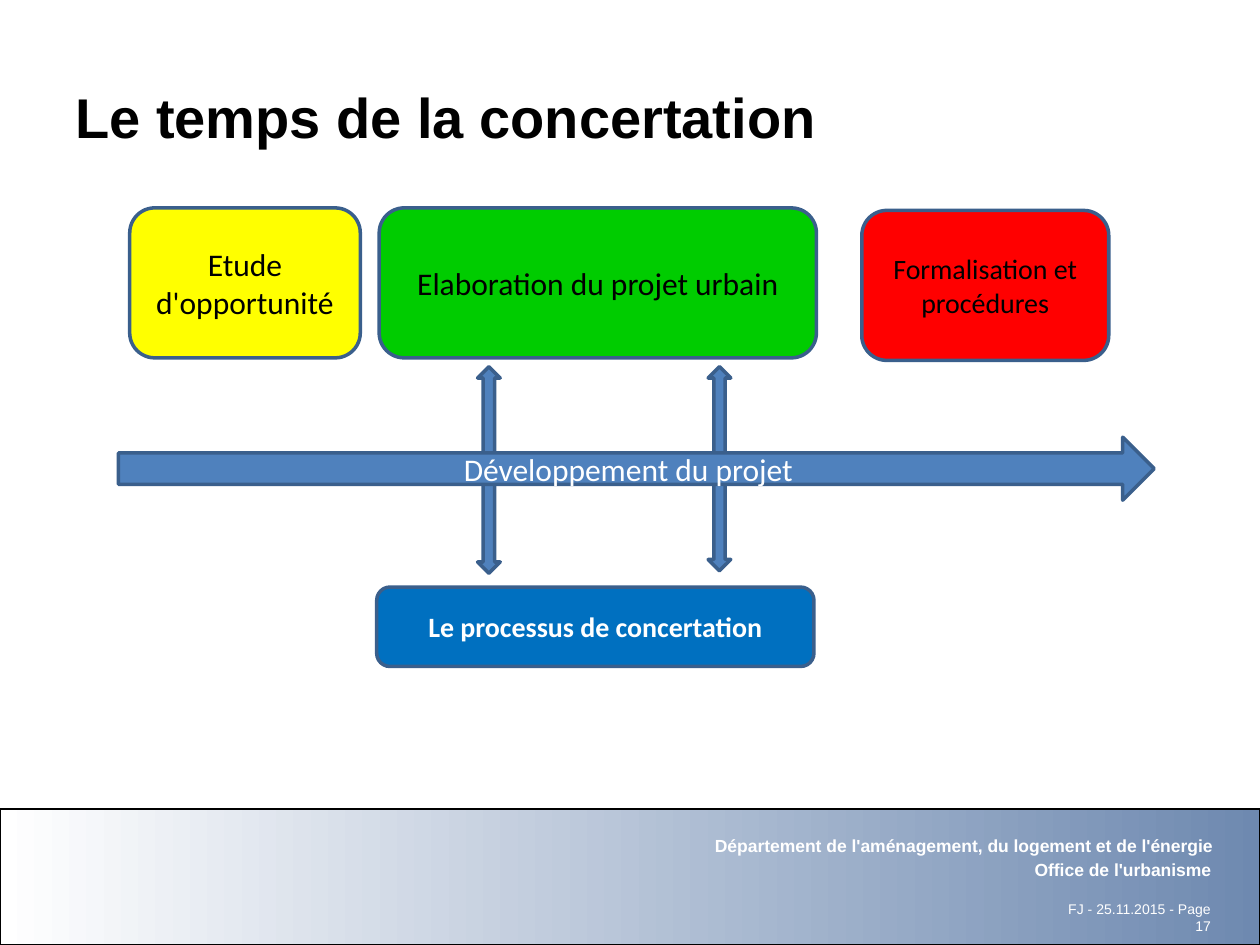
"""Build the slide on the timing of public consultation."""
import dataclasses
import typing

import pptx
import pptx.dml.color
import pptx.enum.shapes
import pptx.enum.text
import pptx.util

Inches = pptx.util.Inches
Kind = pptx.enum.shapes.MSO_SHAPE
Align = pptx.enum.text.PP_ALIGN
Anchor = pptx.enum.text.MSO_ANCHOR


@dataclasses.dataclass(frozen=True)
class Theme:
    black: str = "000000"
    white: str = "FFFFFF"
    haze: str = "6E89B0"
    edge: str = "3A5F8C"
    steel: str = "4F81BD"
    blue: str = "0070C0"
    green: str = "00CC00"
    yellow: str = "FFFF00"
    red: str = "FF0000"
    head: str = "Arial"
    body: str = "Calibri"
    title: int = 32
    large: int = 18
    medium: int = 16
    foot: int = 10
    small: int = 8


THEME = Theme()


class Area(typing.NamedTuple):
    left: float
    top: float
    width: float
    height: float

    def lengths(self) -> list[pptx.util.Length]:
        return [Inches(side) for side in self]


class Style(typing.NamedTuple):
    face: str
    size: int
    color: str
    bold: bool = False


class Block(typing.NamedTuple):
    area: Area
    fill: str
    kind: Kind = Kind.ROUNDED_RECTANGLE
    text: str = ""
    style: Style | None = None
    turn: int = 0


class Label(typing.NamedTuple):
    area: Area
    text: str
    style: Style
    align: Align = Align.RIGHT
    anchor: Anchor = Anchor.TOP


LARGE = Style(THEME.body, THEME.large, THEME.black)
MEDIUM = Style(THEME.body, THEME.medium, THEME.black)
FOOT = Style(THEME.head, THEME.foot, THEME.white, True)

LABELS = [
    Label(Area(8.34, 7.1, 1.37, 0.37), "FJ - 25.11.2015 - Page 17",
          Style(THEME.head, THEME.small, THEME.white)),
    Label(Area(0.5, 0.3, 9, 1.25), "Le temps de la concertation",
          Style(THEME.head, THEME.title, THEME.black, True),
          Align.LEFT, Anchor.MIDDLE),
    Label(Area(1.53, 6.77, 8.18, 0.11), "Office de l'urbanisme", FOOT),
    Label(Area(1.52, 6.58, 8.2, 0.12),
          "Département de l'aménagement, du logement et de l'énergie", FOOT),
]

BLOCKS = [
    Block(Area(2.99, 4.66, 3.47, 0.63), THEME.blue,
          text="Le processus de concertation",
          style=MEDIUM._replace(color=THEME.white, bold=True)),
    Block(Area(3.06, 3.64, 1.64, 0.18), THEME.steel,
          Kind.LEFT_RIGHT_ARROW, turn=270),
    Block(Area(4.9, 3.63, 1.62, 0.18), THEME.steel,
          Kind.LEFT_RIGHT_ARROW, turn=270),
    Block(Area(3.01, 1.65, 3.47, 1.19), THEME.green,
          text="Elaboration du projet urbain", style=LARGE),
    Block(Area(1.03, 1.65, 1.83, 1.19), THEME.yellow,
          text="Etude d'opportunité", style=LARGE),
    Block(Area(6.84, 1.67, 1.96, 1.19), THEME.red,
          text="Formalisation et procédures", style=MEDIUM),
    Block(Area(0.94, 3.47, 8.22, 0.5), THEME.steel, Kind.RIGHT_ARROW,
          "Développement du projet", LARGE._replace(color=THEME.white)),
]


def tint(code: str) -> pptx.dml.color.RGBColor:
    """Turn a hex code into a colour."""
    return pptx.dml.color.RGBColor.from_string(code)


def write(shape, text: str, style: Style, align: Align, anchor: Anchor) -> None:
    """Put one styled paragraph in a shape."""
    frame = shape.text_frame
    frame.word_wrap = True
    frame.vertical_anchor = anchor
    line = frame.paragraphs[0]
    line.text = text
    line.alignment = align
    font = line.font
    font.name = style.face
    font.size = pptx.util.Pt(style.size)
    font.bold = style.bold
    font.color.rgb = tint(style.color)


def place(slide, kind: Kind, area: Area, edge: str, weight: float):
    """Add an outlined shape without a shadow."""
    shape = slide.shapes.add_shape(kind, *area.lengths())
    shape.shadow.inherit = False
    shape.line.color.rgb = tint(edge)
    shape.line.width = pptx.util.Pt(weight)
    return shape


def draw_band(slide) -> None:
    """Draw the shaded footer band."""
    band = place(slide, Kind.RECTANGLE, Area(0, 6.42, 10, 1.08), THEME.black, 1)
    band.fill.gradient()
    band.fill.gradient_angle = 0
    for stop, code in zip(band.fill.gradient_stops, (THEME.white, THEME.haze)):
        stop.color.rgb = tint(code)


def draw_label(slide, label: Label) -> None:
    """Draw a plain text box."""
    box = slide.shapes.add_textbox(*label.area.lengths())
    write(box, label.text, label.style, label.align, label.anchor)


def draw_block(slide, block: Block) -> None:
    """Draw a filled box or arrow."""
    shape = place(slide, block.kind, block.area, THEME.edge, 2)
    shape.fill.solid()
    shape.fill.fore_color.rgb = tint(block.fill)
    shape.rotation = block.turn
    if block.style:
        write(shape, block.text, block.style, Align.CENTER, Anchor.MIDDLE)


def main() -> None:
    """Build and save the deck."""
    deck = pptx.Presentation()
    deck.slide_width, deck.slide_height = Inches(10), Inches(7.5)
    slide = deck.slides.add_slide(deck.slide_layouts[6])
    draw_band(slide)
    for label in LABELS:
        draw_label(slide, label)
    for block in BLOCKS:
        draw_block(slide, block)
    deck.save("out.pptx")


if __name__ == "__main__":
    main()
